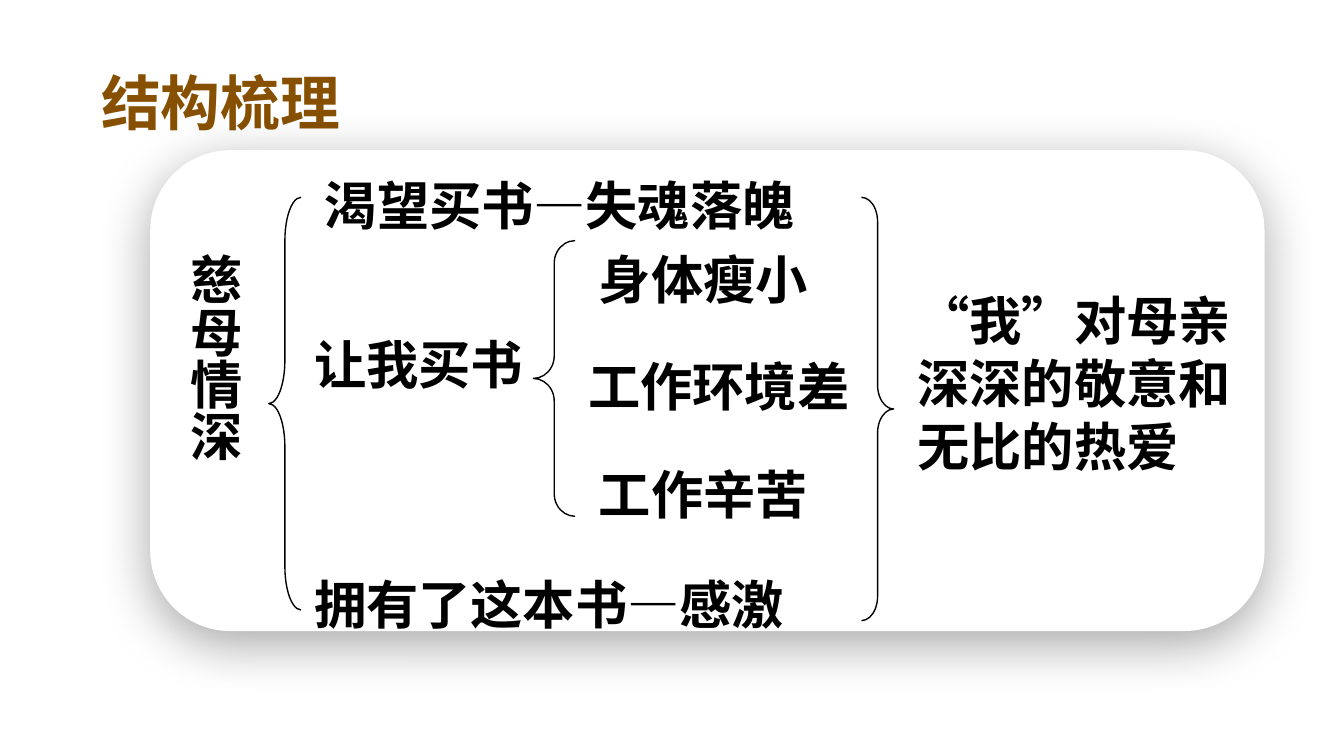
from lxml import etree
from pptx import Presentation
from pptx.dml.color import RGBColor
from pptx.enum.shapes import MSO_SHAPE
from pptx.enum.text import MSO_ANCHOR, MSO_AUTO_SIZE, PP_ALIGN
from pptx.oxml import parse_xml
from pptx.oxml.ns import nsdecls, qn
from pptx.util import Cm, Pt

CARD, BRACE = MSO_SHAPE.ROUNDED_RECTANGLE, MSO_SHAPE.LEFT_BRACE
TOP, LEFT, FIXED = MSO_ANCHOR.TOP, PP_ALIGN.LEFT, MSO_AUTO_SIZE.NONE
TITLE_ONLY = 5

THEME = {
    "font": "Noto Sans CJK SC",
    "title_size": Pt(32),
    "body_size": Pt(28),
    "title": RGBColor(0x87, 0x50, 0x00),
    "ink": RGBColor(0, 0, 0),
    "card": RGBColor(0xFF, 0xFF, 0xFF),
    "brace_line": Pt(0.75),
}

# Places are left, top, width, height in centimetres.
TITLE = ("结构梳理", (1.73, 1.14, 6.17, 1.55))
CARD_PLACE = (2.84, 2.84, 21.06, 9.09)
TOPIC = ("慈母情深", (3.07, 4.55, 1.7, 4.19))
CONCLUSION = ("“我”对母亲深深的敬意和无比的热爱", (17.09, 5.33, 6.6, 3.84))

LINE_HEIGHT = 1.45
STAGES = [  # text, left, top, width
    ("渴望买书—失魂落魄", 5.89, 3.15, 9.8),
    ("让我买书", 5.69, 6.15, 5.21),
    ("拥有了这本书—感激", 5.69, 10.69, 9.8),
]
DETAILS_TOP, DETAILS_STEP = 4.55, 2.03
DETAILS = [  # text, left, width
    ("身体瘦小", 11.07, 5),
    ("工作环境差", 10.87, 5.64),
    ("工作辛苦", 11.07, 4.8),
]
BRACES = [  # place, curl, rotation
    ((5.08, 3.73, 0.61, 7.8), 1.34, 0),
    ((10.08, 4.55, 0.79, 5.21), 0.54, 0),
    ((16.28, 3.73, 0.61, 8), 0.75, 180),
]


def lengths(place):
    return [Cm(value) for value in place]


def write(frame, text, size, color):
    frame.word_wrap = True
    frame.auto_size = FIXED
    frame.vertical_anchor = TOP
    paragraph = frame.paragraphs[0]
    paragraph.text = text
    paragraph.alignment = LEFT
    font = paragraph.font
    font.name, font.size, font.bold = THEME["font"], size, True
    font.color.rgb = color
    # Chinese characters take their typeface from a:ea, next to a:latin.
    latin = next(paragraph._p.iter(qn("a:latin")))
    east_asian = etree.Element(qn("a:ea"), typeface=THEME["font"])
    latin.addnext(east_asian)


def add_label(slide, text, place):
    frame = slide.shapes.add_textbox(*lengths(place)).text_frame
    write(frame, text, THEME["body_size"], THEME["ink"])
    return frame


def add_title(slide):
    text, place = TITLE
    title = slide.shapes.title
    title.left, title.top, title.width, title.height = lengths(place)
    frame = title.text_frame
    frame.margin_left = frame.margin_right = Cm(0.18)
    frame.margin_top = frame.margin_bottom = Cm(0.1)
    write(frame, text, THEME["title_size"], THEME["title"])


def add_card(slide):
    card = slide.shapes.add_shape(CARD, *lengths(CARD_PLACE))
    card.fill.solid()
    card.fill.fore_color.rgb = THEME["card"]
    card.line.fill.background()
    card._element.spPr.append(parse_xml(
        f'<a:effectLst {nsdecls("a")}>'
        f'<a:outerShdw blurRad="{Pt(29)}" dist="{Pt(7)}" dir="5400000" '
        'algn="ctr" rotWithShape="0">'
        f'<a:srgbClr val="{THEME["ink"]}"><a:alpha val="35000"/></a:srgbClr>'
        '</a:outerShdw></a:effectLst>'))


def add_brace(slide, place, curl, rotation):
    brace = slide.shapes.add_shape(BRACE, *lengths(place))
    brace.adjustments[0] = curl
    brace.rotation = rotation
    brace.shadow.inherit = False
    brace.fill.background()
    brace.line.color.rgb = THEME["ink"]
    brace.line.width = THEME["brace_line"]


def main():
    deck = Presentation()
    deck.slide_width, deck.slide_height = Cm(25.4), Cm(14.29)
    slide = deck.slides.add_slide(deck.slide_layouts[TITLE_ONLY])

    add_title(slide)
    add_card(slide)
    topic = add_label(slide, *TOPIC)
    topic.word_wrap = False
    topic._txBody.bodyPr.set("vert", "eaVert")
    for text, left, top, width in STAGES:
        add_label(slide, text, (left, top, width, LINE_HEIGHT))
    for row, (text, left, width) in enumerate(DETAILS):
        top = DETAILS_TOP + row * DETAILS_STEP
        add_label(slide, text, (left, top, width, LINE_HEIGHT))
    add_label(slide, *CONCLUSION)
    for brace in BRACES:
        add_brace(slide, *brace)

    deck.save("out.pptx")


if __name__ == "__main__":
    main()
